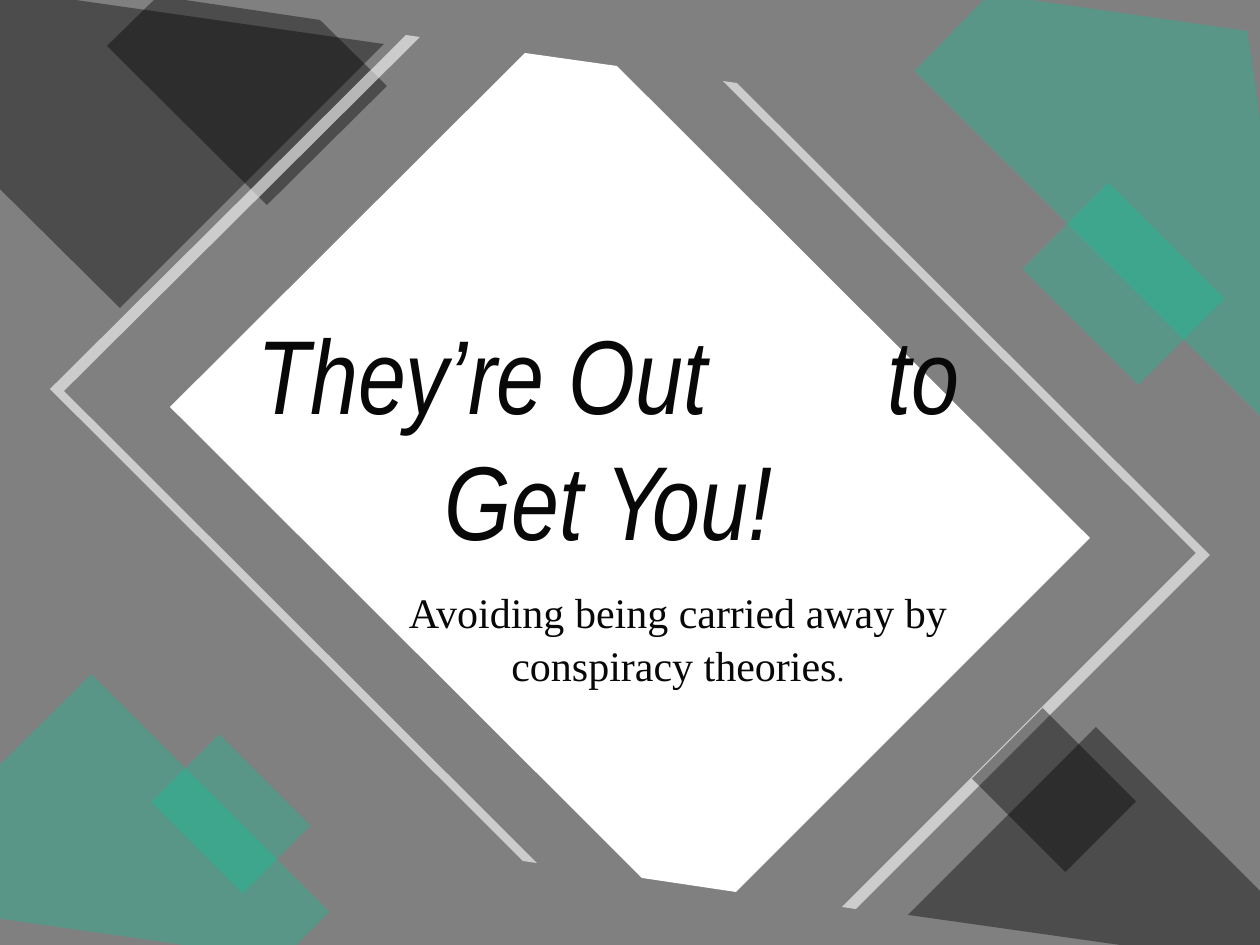
from lxml.etree import SubElement
from pptx import Presentation
from pptx.dml.color import RGBColor
from pptx.enum.shapes import MSO_SHAPE
from pptx.enum.text import MSO_ANCHOR, MSO_AUTO_SIZE, PP_ALIGN
from pptx.oxml.ns import qn
from pptx.util import Pt

PX = 914400 / 126
WIDE, HIGH = 1260, 945
COLORS = {
    "back": "808080",
    "dark": "000000",
    "teal": "00CC99",
    "white": "FFFFFF",
    "ink": "080808",
}


def emu(px):
    return round(px * PX)


class Deck:
    def __init__(self):
        self.prs = Presentation()
        self.prs.slide_width, self.prs.slide_height = emu(WIDE), emu(HIGH)
        self.slide = self.prs.slides.add_slide(self.prs.slide_layouts[0])
        self.shapes = self.slide.shapes

    def paint(self, shape, color, alpha):
        """Fill a shape; alpha is its opacity in percent."""
        shape.shadow.inherit = False
        shape.line.fill.background()
        shape.fill.solid()
        shape.fill.fore_color.rgb = RGBColor.from_string(COLORS[color])
        if alpha < 100:
            tint = shape._element.spPr.find(".//" + qn("a:srgbClr"))
            SubElement(tint, qn("a:alpha"), val=str(alpha * 1000))

    def rect(self, box, color, alpha=100, turn=0):
        shape = self.shapes.add_shape(MSO_SHAPE.RECTANGLE, *map(emu, box))
        shape.rotation = turn
        self.paint(shape, color, alpha)

    def poly(self, color, alpha, *rings):
        """Draw one shape from one or more closed rings of points."""
        pen = self.shapes.build_freeform(*rings[0][0], scale=PX)
        for i, ring in enumerate(rings):
            if i:
                pen.move_to(*ring[0])
            pen.add_line_segments(ring[1:], close=True)
        self.paint(pen.convert_to_shape(), color, alpha)

    def text(self, holder, box, font, runs, anchor, lead=1.0, tab=None, italic=False):
        """Place a placeholder on top and fill it with (text, size) runs."""
        holder.left, holder.top, holder.width, holder.height = map(emu, box)
        self.shapes._spTree.append(holder._element)
        frame = holder.text_frame
        frame.word_wrap = True
        frame.auto_size = MSO_AUTO_SIZE.NONE
        frame.vertical_anchor = anchor
        para = frame.paragraphs[0]
        para.alignment = PP_ALIGN.CENTER
        para.line_spacing = lead
        para.space_before = Pt(0)
        if tab:
            stops = SubElement(para._p.get_or_add_pPr(), qn("a:tabLst"))
            SubElement(stops, qn("a:tab"), pos=str(emu(tab)), algn="l")
        for words, size in runs:
            run = para.add_run()
            run.text = words
            run.font.name = font
            run.font.size = Pt(size)
            run.font.italic = italic
            run.font.color.rgb = RGBColor.from_string(COLORS["ink"])


def main():
    deck = Deck()
    title, sub = deck.slide.placeholders
    deck.rect((0, 0, WIDE, HIGH), "back")

    # Top corners
    deck.poly("dark", 40, [(-29, -15), (384, 44), (120, 308), (-1, 188)])
    deck.poly("dark", 40, [(158, -4), (320, 20), (387, 86), (267, 205), (107, 46)])
    deck.poly("teal", 30, [(989, -6), (1247, 31), (1309, 465), (914, 71)])
    deck.rect((1041, 223, 164, 122), "teal", 30, 45)

    # Bottom left corner
    deck.poly("teal", 30, [(91, 674), (329, 912), (282, 959), (-13, 917), (-30, 794)])
    deck.rect((166, 766, 129, 96), "teal", 30, 45)

    # Central panel and its frame
    deck.poly("white", 100, [(525, 53), (617, 66), (1090, 538),
                             (736, 892), (642, 878), (170, 407)])
    deck.poly("white", 60,
              [(723, 81), (737, 83), (1210, 555), (856, 909), (842, 907), (1196, 553)],
              [(406, 35), (420, 37), (64, 391), (537, 863), (523, 861), (50, 389)])

    deck.text(sub, (384, 578, 588, 158), "Times New Roman",
              [("Avoiding being carried away by conspiracy theories", 24), (".", 18)],
              MSO_ANCHOR.TOP, lead=1.05)
    deck.text(title, (197, 287, 823, 296), "Arial Narrow",
              [("They’re Out\tto Get You!", 60)],
              MSO_ANCHOR.MIDDLE, tab=630, italic=True)

    # Bottom right corner
    deck.poly("dark", 40, [(1096, 727), (1280, 911), (1289, 969), (908, 915)])
    deck.rect((988, 740, 132, 100), "dark", 40, 45)

    deck.prs.save("out.pptx")


if __name__ == "__main__":
    main()
